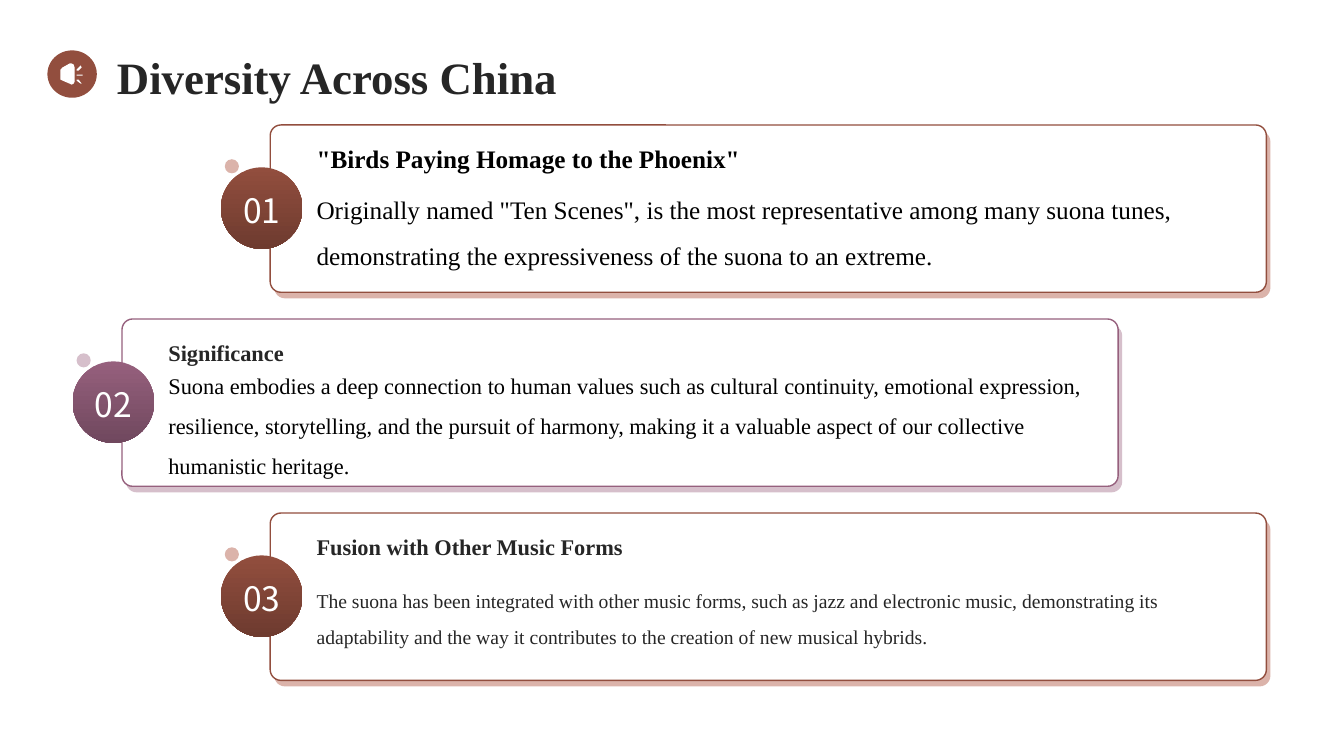
from pptx import Presentation
from pptx.dml.color import RGBColor
from pptx.enum import shapes, text
from pptx.util import Inches, Pt

WHITE = RGBColor(0xFF, 0xFF, 0xFF)
BLACK = RGBColor(0x00, 0x00, 0x00)
INK = RGBColor(0x26, 0x26, 0x26)
BROWN = RGBColor(0x92, 0x4E, 0x3E)
DARK_BROWN = RGBColor(0x6E, 0x3B, 0x2F)
ROSE = RGBColor(0xDB, 0xB3, 0xAA)
PLUM = RGBColor(0x96, 0x60, 0x7D)
DARK_PLUM = RGBColor(0x70, 0x48, 0x5E)
LILAC = RGBColor(0xD6, 0xBF, 0xCB)

SERIF = "Times New Roman"
SANS = "Noto Sans CJK SC"
BROWN_SET = (BROWN, DARK_BROWN, ROSE)
PLUM_SET = (PLUM, DARK_PLUM, LILAC)

CARD_TOP, CARD_STEP = 1.24, 1.925
CARD_WIDTH, CARD_HEIGHT = 9.88, 1.66

# left, colours, heading, heading size, heading colour, body, body size, body colour
CARDS = [
    (2.68, BROWN_SET, '"Birds Paying Homage to the Phoenix"', 18, BLACK,
     'Originally named "Ten Scenes", is the most representative among many suona tunes, '
     'demonstrating the expressiveness of the suona to an extreme.', 18, BLACK),
    (1.21, PLUM_SET, "Significance", 16, INK,
     "Suona embodies a deep connection to human values such as cultural continuity, "
     "emotional expression, resilience, storytelling, and the pursuit of harmony, making it "
     "a valuable aspect of our collective humanistic heritage.", 16, BLACK),
    (2.68, BROWN_SET, "Fusion with Other Music Forms", 16, INK,
     "The suona has been integrated with other music forms, such as jazz and electronic "
     "music, demonstrating its adaptability and the way it contributes to the creation of "
     "new musical hybrids.", 14, INK),
]

# Outlines of the horn and its three sound rays, in hundredths of an inch
HORN_OUTLINES = [
    [(11, 0), (13, 1), (14, 4), (14, 18), (13, 20.5), (11, 21), (9, 20.5),
     (2, 17), (0.5, 15.5), (0, 14), (0, 8), (0.5, 6), (2, 4), (9, 0.5)],
    [(16, 6.5), (20, 2.5), (21, 3.5), (17.5, 7.3), (16.3, 7.3)],
    [(16.5, 10.8), (22, 10.8), (22.5, 11.5), (22, 12.2), (16.5, 12.2), (16, 11.5)],
    [(16.3, 15.8), (17.5, 15.8), (21, 19.5), (20, 20.5), (16, 16.7)],
]


def write(frame, words, size, color, font=SERIF, bold=False, spacing=None,
          align=text.PP_ALIGN.LEFT, anchor=text.MSO_ANCHOR.MIDDLE):
    frame.margin_left = frame.margin_right = frame.margin_top = frame.margin_bottom = 0
    frame.word_wrap = True
    frame.auto_size = text.MSO_AUTO_SIZE.NONE
    frame.vertical_anchor = anchor
    para = frame.paragraphs[0]
    para.alignment = align
    if spacing:
        para.line_spacing = spacing
    span = para.add_run()
    span.text = words
    span.font.name = font
    span.font.size = Pt(size)
    span.font.bold = bold
    span.font.color.rgb = color


def add_text(page, left, top, width, height, words, size, color, **style):
    box = page.shapes.add_textbox(Inches(left), Inches(top), Inches(width), Inches(height))
    write(box.text_frame, words, size, color, **style)


def paint(shape, fill, line=None):
    """Fill with one colour, or with a top-to-bottom gradient if given a pair."""
    shape.shadow.inherit = False
    if isinstance(fill, RGBColor):
        shape.fill.solid()
        shape.fill.fore_color.rgb = fill
    else:
        shape.fill.gradient()
        shape.fill.gradient_angle = 270
        for stop, color in zip(shape.fill.gradient_stops, fill):
            stop.color.rgb = color
    if line:
        shape.line.color.rgb = line
        shape.line.width = Pt(1)
    else:
        shape.line.fill.background()


def add_oval(page, left, top, width, height, fill):
    oval = page.shapes.add_shape(shapes.MSO_SHAPE.OVAL, Inches(left), Inches(top),
                                 Inches(width), Inches(height))
    paint(oval, fill)


def add_panel(page, left, top, width, height, fill, line=None):
    panel = page.shapes.add_shape(shapes.MSO_SHAPE.ROUNDED_RECTANGLE, Inches(left),
                                  Inches(top), Inches(width), Inches(height))
    panel.adjustments[0] = 0.064
    paint(panel, fill, line)


def add_header(page, left, top):
    title = page.shapes.title
    title.left, title.top = Inches(left + 0.69), Inches(top)
    title.width, title.height = Inches(11.43), Inches(0.47)
    write(title.text_frame, "Diversity Across China", 32, INK, bold=True, spacing=1.1)
    add_oval(page, left, top, 0.49, 0.47, BROWN)
    add_horn(page, left + 0.13, top + 0.13)


def add_horn(page, left, top):
    first, *rays = HORN_OUTLINES
    builder = page.shapes.build_freeform(*first[0], scale=Inches(0.01))
    builder.add_line_segments(first[1:], close=True)
    for ray in rays:
        builder.move_to(*ray[0])
        builder.add_line_segments(ray[1:], close=True)
    paint(builder.convert_to_shape(Inches(left), Inches(top)), WHITE)


def add_card(page, number, left, top, width, height, colors,
             heading, heading_size, heading_color, body, body_size, body_color):
    main, dark, pale = colors
    add_panel(page, left + 0.04, top + 0.06, width, height, pale)
    add_panel(page, left, top, width, height, WHITE, main)
    text_left, text_width = left + 0.46, width - 0.64
    add_text(page, text_left, top + 0.46, text_width, 1.06, body, body_size, body_color,
             spacing=1.5)
    add_text(page, text_left, top + 0.15, text_width, 0.37, heading, heading_size,
             heading_color, bold=True)
    add_oval(page, left - 0.49, top + 0.42, 0.81, 0.81, (main, dark))
    add_text(page, left - 0.33, top + 0.64, 0.49, 0.37, f"{number:02}", 24, WHITE, font=SANS,
             align=text.PP_ALIGN.CENTER, anchor=text.MSO_ANCHOR.TOP)
    add_oval(page, left - 0.45, top + 0.34, 0.14, 0.14, pale)


def main():
    deck = Presentation()
    deck.slide_width, deck.slide_height = Inches(13.33), Inches(7.5)
    page = deck.slides.add_slide(deck.slide_layouts[5])
    add_header(page, 0.47, 0.5)
    for index, (left, *content) in enumerate(CARDS):
        add_card(page, index + 1, left, CARD_TOP + index * CARD_STEP,
                 CARD_WIDTH, CARD_HEIGHT, *content)
    deck.save("out.pptx")


if __name__ == "__main__":
    main()
